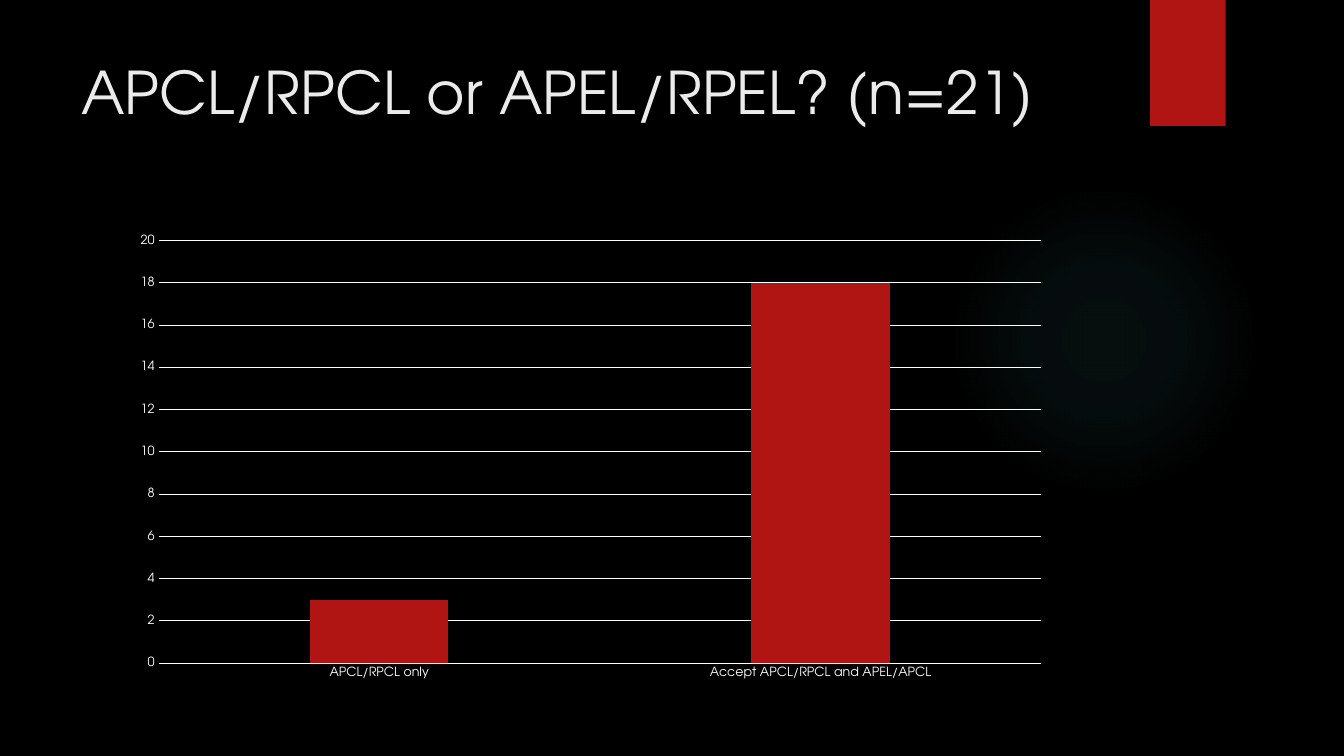
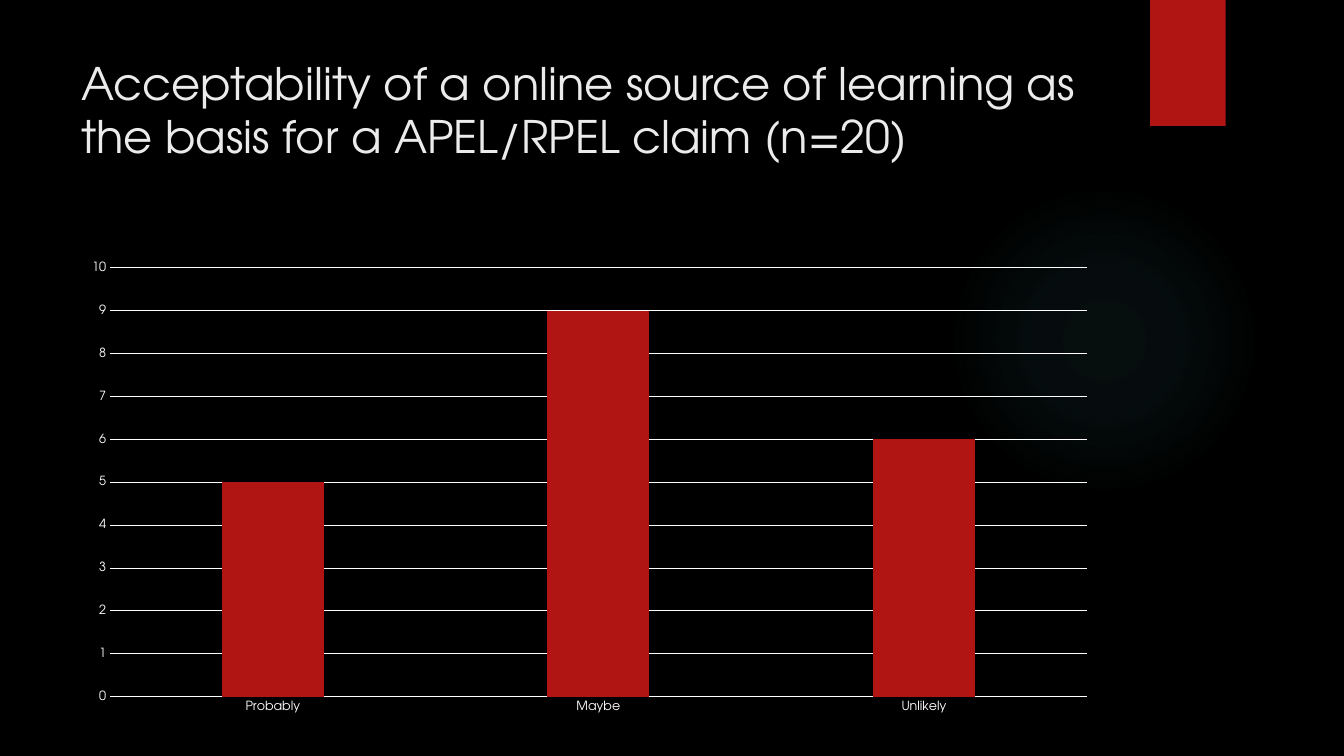
from pptx import Presentation
from pptx.chart.data import CategoryChartData
from pptx.dml.color import RGBColor
from pptx.enum.chart import XL_CHART_TYPE, XL_TICK_MARK
from pptx.enum.shapes import MSO_SHAPE
from pptx.enum.text import MSO_ANCHOR
from pptx.oxml import parse_xml
from pptx.oxml.ns import nsdecls
from pptx.util import Pt

COLUMN = XL_CHART_TYPE.COLUMN_CLUSTERED
NO_TICK = XL_TICK_MARK.NONE
OVAL = MSO_SHAPE.OVAL
RECT = MSO_SHAPE.RECTANGLE
TOP = MSO_ANCHOR.TOP

BLACK = RGBColor(0x00, 0x00, 0x00)
WHITE = RGBColor(0xFF, 0xFF, 0xFF)
PALE = RGBColor(0xEB, 0xEB, 0xEB)
RED = RGBColor(0xB0, 0x15, 0x13)
TEAL = RGBColor(0x50, 0xB9, 0xC1)

FACE = "TeX Gyre Adventor"
GLOW = ((0, 7), (36, 6), (69, 0))


def assign(item, values):
    for name, value in values.items():
        setattr(item, name, value)


class Deck:
    def __init__(self):
        self.deck = Presentation()
        assign(self.deck, {"slide_width": Pt(960), "slide_height": Pt(540)})
        self.slide = None

    def start(self):
        self.slide = self.deck.slides.add_slide(self.deck.slide_layouts[6])
        fill = self.slide.background.fill
        fill.solid()
        fill.fore_color.rgb = BLACK
        self.glow()
        self.tab()

    def shape(self, kind, box):
        shape = self.slide.shapes.add_shape(kind, *map(Pt, box))
        shape.shadow.inherit = False
        shape.line.fill.background()
        return shape

    def glow(self):
        shape = self.shape(OVAL, (677.5, 132, 222, 222))
        shape.fill.background()
        stops = "".join(
            f'<a:gs pos="{pos * 1000}"><a:srgbClr val="{TEAL}">'
            f'<a:alpha val="{alpha * 1000}"/></a:srgbClr></a:gs>'
            for pos, alpha in GLOW
        )
        blend = parse_xml(
            f'<a:gradFill {nsdecls("a")} rotWithShape="1"><a:gsLst>{stops}</a:gsLst>'
            '<a:path path="circle"><a:fillToRect l="50000" t="50000" '
            'r="50000" b="50000"/></a:path></a:gradFill>'
        )
        props = shape.element.spPr
        props.replace(props.find("{*}noFill"), blend)

    def tab(self):
        shape = self.shape(RECT, (821.5, 0, 54, 90))
        shape.fill.solid()
        shape.fill.fore_color.rgb = RED

    def font(self, font, size, color):
        assign(font, {"name": FACE, "size": Pt(size), "bold": False})
        font.color.rgb = color

    def title(self, text, size):
        box = self.slide.shapes.add_textbox(Pt(51), Pt(36), Pt(741), Pt(110))
        frame = box.text_frame
        assign(frame, {"word_wrap": True, "vertical_anchor": TOP})
        line = frame.paragraphs[0]
        line.text = text
        self.font(line.runs[0].font, size, PALE)

    def stroke(self, line):
        line.width = Pt(0.75)
        line.color.rgb = WHITE

    def chart(self, box, values, top, step):
        data = CategoryChartData()
        data.categories = list(values)
        data.add_series("Series 1", list(values.values()))
        chart = self.slide.shapes.add_chart(COLUMN, *map(Pt, box), data).chart
        assign(chart, {"has_legend": False, "has_title": False})
        self.font(chart.font, 10, WHITE)
        plot = chart.plots[0]
        assign(plot, {"gap_width": 219, "overlap": -27, "vary_by_categories": False})
        fill = plot.series[0].format.fill
        fill.solid()
        fill.fore_color.rgb = RED
        cats, scale = chart.category_axis, chart.value_axis
        for axis in (cats, scale):
            assign(axis, {"major_tick_mark": NO_TICK, "minor_tick_mark": NO_TICK})
            self.font(axis.tick_labels.font, 9, WHITE)
        assign(scale, {"minimum_scale": 0, "maximum_scale": top,
                       "major_unit": step, "has_major_gridlines": True})
        self.stroke(cats.format.line)
        self.stroke(scale.major_gridlines.format.line)
        scale.format.line.fill.background()


def main():
    deck = Deck()

    deck.start()
    deck.title("APCL/RPCL or APEL/RPEL? (n=21)", 42)
    deck.chart((87, 161, 670, 330.5),
               {"APCL/RPCL only": 3, "Accept APCL/RPCL and APEL/APCL": 18}, 20, 2)

    deck.start()
    deck.title("Acceptability of a online source of learning as "
               "the basis for a APEL/RPEL claim (n=20)", 32)
    deck.chart((51, 180.5, 740, 335),
               {"Probably": 5, "Maybe": 9, "Unlikely": 6}, 10, 1)

    deck.deck.save("out.pptx")


if __name__ == "__main__":
    main()
